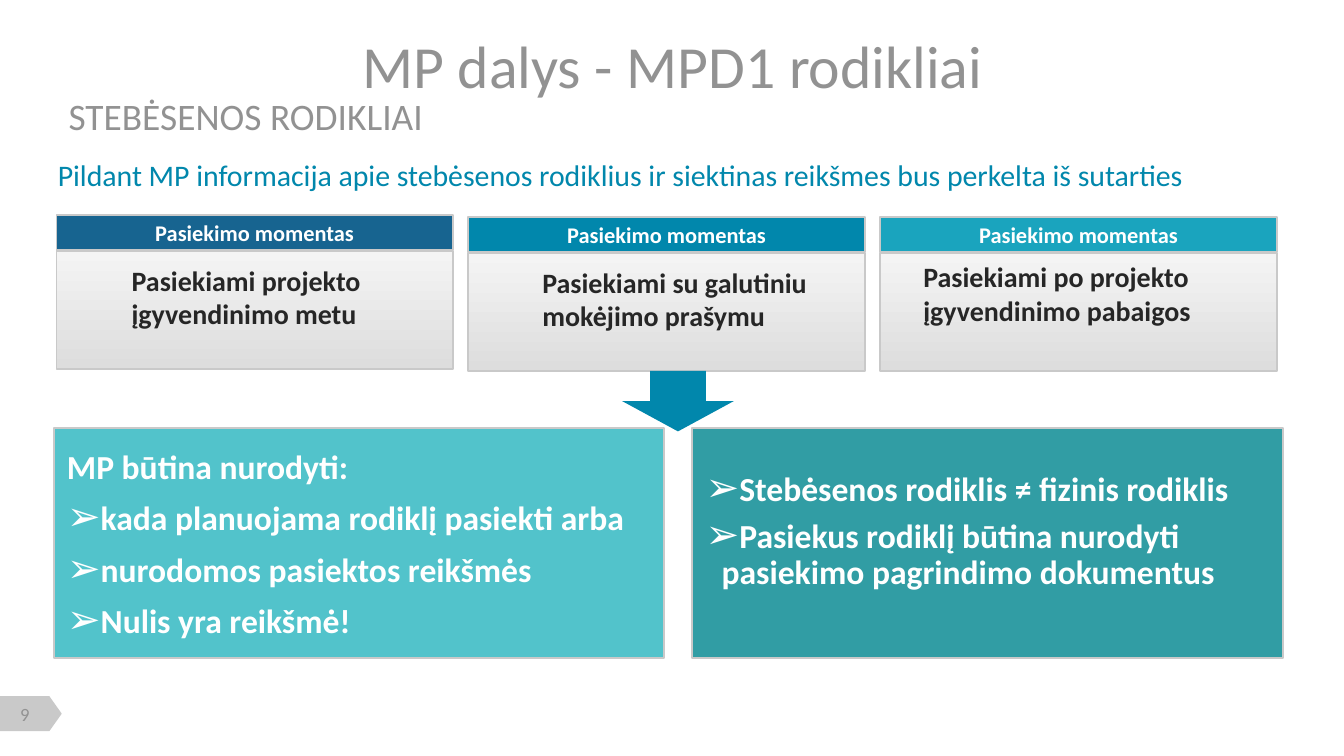
from lxml.etree import SubElement
from pptx import Presentation
from pptx.dml.color import RGBColor
from pptx.enum.shapes import MSO_SHAPE
from pptx.enum.text import MSO_ANCHOR, MSO_AUTO_SIZE, PP_ALIGN
from pptx.oxml.ns import qn
from pptx.util import Inches, Pt

CELL = Inches(0.1)
COLS, ROWS = 100, 56.25
WHITE = RGBColor(0xFF, 0xFF, 0xFF)
GREY = RGBColor(0x92, 0x92, 0x92)
EDGE = RGBColor(0xC9, 0xC9, 0xC9)
PALE = RGBColor(0xF4, 0xF4, 0xF4)
DIM = RGBColor(0xDD, 0xDD, 0xDD)
INK = RGBColor(0x26, 0x26, 0x26)
NAVY = RGBColor(0x17, 0x64, 0x90)
BLUE = RGBColor(0x01, 0x87, 0xAC)
CYAN = RGBColor(0x1A, 0xA4, 0xBE)
AQUA = RGBColor(0x52, 0xC3, 0xCB)
TEAL = RGBColor(0x31, 0x9D, 0xA4)
HEAD = (0, 0.5, 1, 0.5)


def grid(box):
    """Turn a box of grid cells into slide lengths."""
    return [round(n * CELL) for n in box]


def shift(box, left, top, width, height):
    """Give a box that is placed relative to another."""
    return box[0] + left, box[1] + top, width, height


def bullet(para):
    """Put an arrow bullet with a hanging indent on a paragraph."""
    props = para._p.get_or_add_pPr()
    props.set("marL", str(Inches(0.12)))
    props.set("indent", str(-Inches(0.12)))
    SubElement(props, qn("a:buSzPct")).set("val", "120000")
    SubElement(props, qn("a:buFont")).set("typeface", "Calibri")
    SubElement(props, qn("a:buChar")).set("char", "➢")


def write(shape, lines, size, color, bold=False, align=PP_ALIGN.LEFT,
          anchor=MSO_ANCHOR.MIDDLE, pad=(0, 0, 0, 0), after=0, marks=()):
    """Fill a shape with paragraphs of one style."""
    frame = shape.text_frame
    frame.word_wrap = True
    frame.auto_size = MSO_AUTO_SIZE.NONE
    frame.vertical_anchor = anchor
    (frame.margin_left, frame.margin_top,
     frame.margin_right, frame.margin_bottom) = grid(pad)
    frame.text = "\n".join(lines)
    for i, para in enumerate(frame.paragraphs):
        if i in marks:
            bullet(para)
        para.alignment = align
        para.space_before = Pt(0)
        para.space_after = Pt(after)
        font = para.font
        font.name, font.size, font.bold = "Calibri", Pt(size), bold
        font.color.rgb = color
    return frame


def label(slide, box, lines, size, color, **style):
    """Add a text box."""
    shape = slide.shapes.add_textbox(*grid(box))
    return write(shape, lines, size, color, **style)


def block(slide, box, fill=None, kind=MSO_SHAPE.RECTANGLE, edge=True):
    """Add a preset shape, shaded grey when no fill is given."""
    shape = slide.shapes.add_shape(kind, *grid(box))
    shape.shadow.inherit = False
    if fill is None:
        shape.fill.gradient()
        shape.fill.gradient_angle = 90
        for stop, color in zip(shape.fill.gradient_stops, (DIM, PALE)):
            stop.color.rgb = color
    else:
        shape.fill.solid()
        shape.fill.fore_color.rgb = fill
    if edge:
        shape.line.color.rgb = EDGE
        shape.line.width = Pt(1)
    else:
        shape.line.fill.background()
    return shape


def header(slide, box):
    """Place the title, the subtitle and the lead line."""
    title = slide.shapes.title
    title.left, title.top, title.width, title.height = grid(
        shift(box, 5.1, 6.65, 91.5, 3.9))
    write(title, ["STEBĖSENOS RODIKLIAI"], 20, GREY, pad=HEAD)
    label(slide, shift(box, 4.8, 1.95, 91.5, 5.7), ["MP dalys - MPD1 rodikliai"],
          32, GREY, align=PP_ALIGN.CENTER, pad=HEAD)
    label(slide, shift(box, 4.3, 11.2, 91.2, 3.6),
          ["Pildant MP informacija apie stebėsenos rodiklius ir siektinas "
           "reikšmes bus perkelta iš sutarties"], 16, BLUE)


def card(slide, box, color, text, inset):
    """Place a headed card with its text inset."""
    wide, high = box[2:]
    block(slide, shift(box, 0, 2.7, wide, high - 2.7))
    top = block(slide, shift(box, 0, 0, wide, 2.6), color)
    write(top, ["Pasiekimo momentas"], 12, WHITE, bold=True,
          align=PP_ALIGN.CENTER)
    label(slide, shift(box, *inset, 5), [text], 15, INK, bold=True,
          anchor=MSO_ANCHOR.TOP)


def cards(slide, box):
    """Place the row of cards at an equal pitch."""
    parts = [
        (NAVY, "Pasiekiami projekto įgyvendinimo metu", -0.15,
         (5.6, 3.6, 22.7)),
        (BLUE, "Pasiekiami su galutiniu mokėjimo prašymu", 0, (5.5, 3.6, 22.2)),
        (CYAN, "Pasiekiami po projekto įgyvendinimo pabaigos", 0,
         (3.2, 3.2, 25.1)),
    ]
    wide = 29.5
    pitch = (box[2] - wide) / (len(parts) - 1)
    for i, (color, text, drop, inset) in enumerate(parts):
        card(slide, shift(box, i * pitch, drop, wide, box[3]), color, text, inset)


def panels(slide, box):
    """Place the two panels and the arrow that leads to them."""
    high = box[3]
    block(slide, shift(box, 47.5, 0, 44, high), TEAL)
    left = block(slide, shift(box, 0, 0, 45.4, high), AQUA)
    write(left, ["MP būtina nurodyti:", "kada planuojama rodiklį pasiekti arba",
                 "nurodomos pasiektos reikšmės", "Nulis yra reikšmė!"],
          18, WHITE, bold=True, pad=(1, 0.5, 1, 0.5), after=6, marks=(1, 2, 3))
    frame = label(slide, shift(box, 48.5, 2.95, 43, 9.3),
                  ["Stebėsenos rodiklis ≠ fizinis rodiklis",
                   "Pasiekus rodiklį būtina nurodyti pasiekimo pagrindimo "
                   "dokumentus"], 18, WHITE, bold=True,
                  anchor=MSO_ANCHOR.TOP, after=6, marks=(0, 1))
    frame.paragraphs[1].line_spacing = 0.9
    block(slide, shift(box, 42.3, -4.25, 8.3, 4.5), BLUE,
          MSO_SHAPE.DOWN_ARROW, edge=False)


def footer(slide, box):
    """Place the page tag with its number."""
    tag = block(slide, shift(box, 1, 0, 2.6, 4.6), EDGE,
                MSO_SHAPE.FLOWCHART_OFFPAGE_CONNECTOR, edge=False)
    tag.rotation = 270
    label(slide, shift(box, 0.2, 1.5, 3.3, 1.7), ["9"], 10, GREY,
          align=PP_ALIGN.CENTER)


def main():
    """Build and save the slide."""
    deck = Presentation()
    deck.slide_width, deck.slide_height = grid((COLS, ROWS))
    slide = deck.slides.add_slide(deck.slide_layouts[5])
    footer(slide, (0, 50.8, 4.6, 4.6))
    header(slide, (0, 0, COLS, 15))
    cards(slide, (4.2, 16.15, 90.8, 11.45))
    panels(slide, (4, 31.85, 91.5, 17.1))
    deck.save("out.pptx")


if __name__ == "__main__":
    main()
